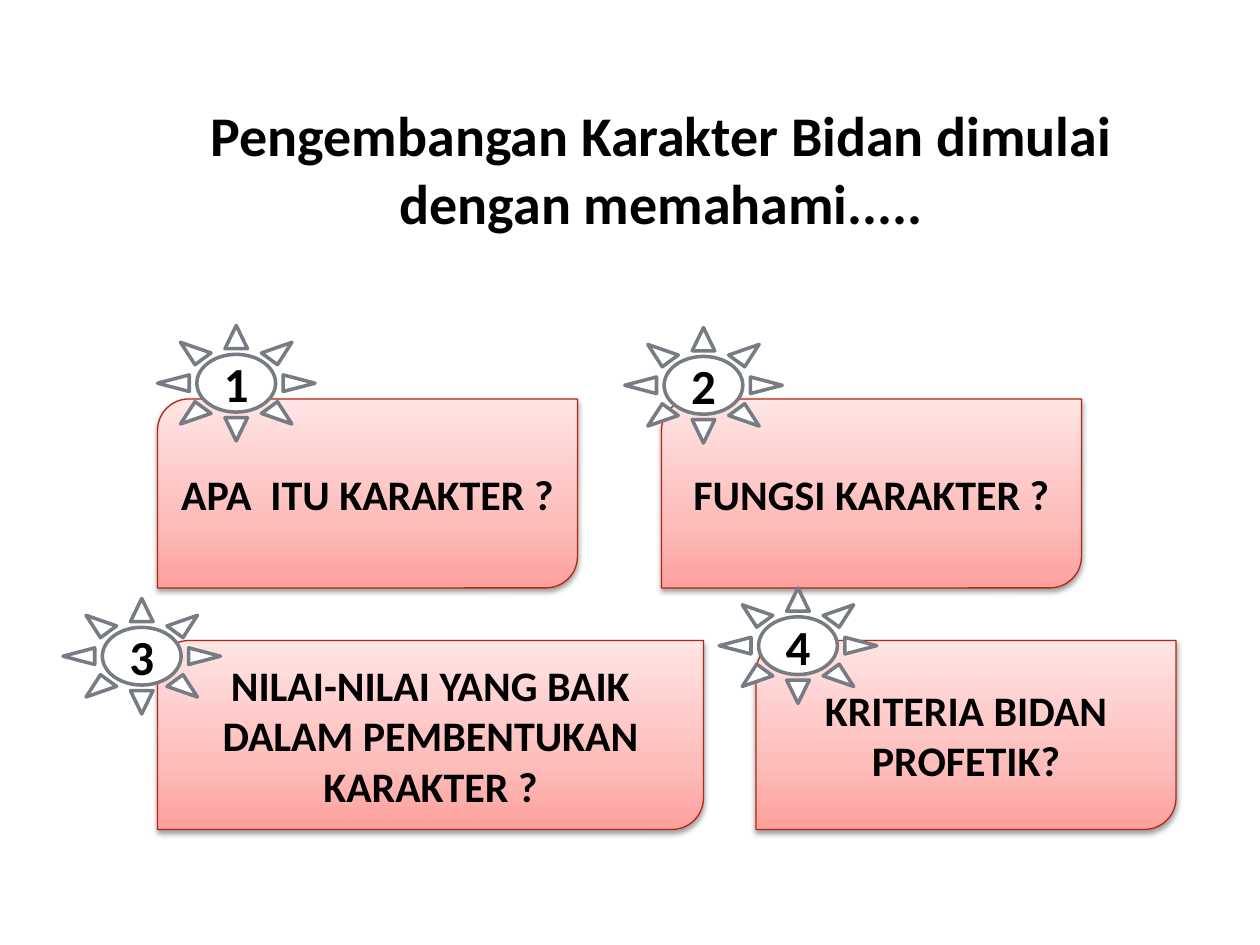
from copy import deepcopy

from pptx import Presentation
from pptx.dml.color import RGBColor
from pptx.enum.shapes import MSO_SHAPE
from pptx.enum.text import MSO_ANCHOR, PP_ALIGN
from pptx.oxml import parse_xml
from pptx.oxml.ns import nsdecls, qn
from pptx.util import Inches, Pt

CARD = MSO_SHAPE.ROUND_2_DIAG_RECTANGLE
SUN = MSO_SHAPE.SUN
CENTER = PP_ALIGN.CENTER
MIDDLE = MSO_ANCHOR.MIDDLE

TITLE = "Pengembangan Karakter Bidan dimulai dengan memahami....."
TOPICS = [
    {"text": "APA  ITU KARAKTER ?", "card": (15, 38, 40), "sun": (15, 31)},
    {"text": "FUNGSI KARAKTER ?", "card": (63, 38, 40), "sun": (59.5, 31.2)},
    {"text": "NILAI-NILAI YANG BAIK DALAM PEMBENTUKAN KARAKTER ?",
     "card": (15, 61, 52), "sun": (6, 57)},
    {"text": "KRITERIA BIDAN PROFETIK?", "card": (72, 61, 40), "sun": (68.5, 56)},
]

THEME = {
    "font": "Calibri",
    "ink": "000000",
    "sizes": {"title": 32, "card": 24, "sun": 28},
    "card_stops": [(0, "FEA09D"), (0.35, "FDBDBB"), (1, "FFE5E4")],
    "card_line": ("B32812", 0.75),
    "sun_fill": "FFFFFF",
    "sun_line": ("777C84", 2),
}

COLUMNS, ROWS = 120, 90
TITLE_AREA = (11, 7, 104, 18)
CARD_ROWS = 18
SUN_COLUMNS, SUN_ROWS = 15, 11

deck = Presentation()
deck.slide_width, deck.slide_height = Inches(10), Inches(7.5)


def area(left, top, width, height):
    column, row = deck.slide_width / COLUMNS, deck.slide_height / ROWS
    return [round(n) for n in (left * column, top * row, width * column, height * row)]


def write(shape, text, size):
    frame = shape.text_frame
    frame.word_wrap = True
    frame.vertical_anchor = MIDDLE
    para = frame.paragraphs[0]
    para.alignment = CENTER
    span = para.add_run()
    span.text = text
    for name, value in {"name": THEME["font"], "size": Pt(size), "bold": True}.items():
        setattr(span.font, name, value)
    span.font.color.rgb = RGBColor.from_string(THEME["ink"])


def add_shape(page, kind, place, line, text, size):
    shape = page.shapes.add_shape(kind, *area(*place))
    shape.shadow.inherit = False
    color, width = line
    shape.line.color.rgb = RGBColor.from_string(color)
    shape.line.width = Pt(width)
    write(shape, text, size)
    return shape


def paint_gradient(shape, stops):
    shape.fill.gradient()
    shape.fill.gradient_angle = 90
    stop_list = shape.element.spPr.find(".//" + qn("a:gsLst"))
    stop_list.insert(1, deepcopy(stop_list[0]))
    for stop, (position, color) in zip(shape.fill.gradient_stops, stops):
        stop.position = position
        stop.color.rgb = RGBColor.from_string(color)


def add_shadow(shape):
    shape.element.spPr.find(qn("a:effectLst")).append(parse_xml(
        f'<a:outerShdw {nsdecls("a")} blurRad="{Pt(3.1)}" dist="{Pt(1.6)}" '
        'dir="5400000" rotWithShape="0">'
        f'<a:srgbClr val="{THEME["ink"]}"><a:alpha val="38000"/></a:srgbClr>'
        '</a:outerShdw>'))


page = deck.slides.add_slide(deck.slide_layouts[5])
title = page.shapes.title
title.left, title.top, title.width, title.height = area(*TITLE_AREA)
sizes = THEME["sizes"]
write(title, TITLE, sizes["title"])

for topic in TOPICS:
    card = add_shape(page, CARD, (*topic["card"], CARD_ROWS),
                     THEME["card_line"], topic["text"], sizes["card"])
    paint_gradient(card, THEME["card_stops"])
    add_shadow(card)

for number, topic in enumerate(TOPICS, 1):
    sun = add_shape(page, SUN, (*topic["sun"], SUN_COLUMNS, SUN_ROWS),
                    THEME["sun_line"], str(number), sizes["sun"])
    sun.fill.solid()
    sun.fill.fore_color.rgb = RGBColor.from_string(THEME["sun_fill"])

deck.save("out.pptx")
